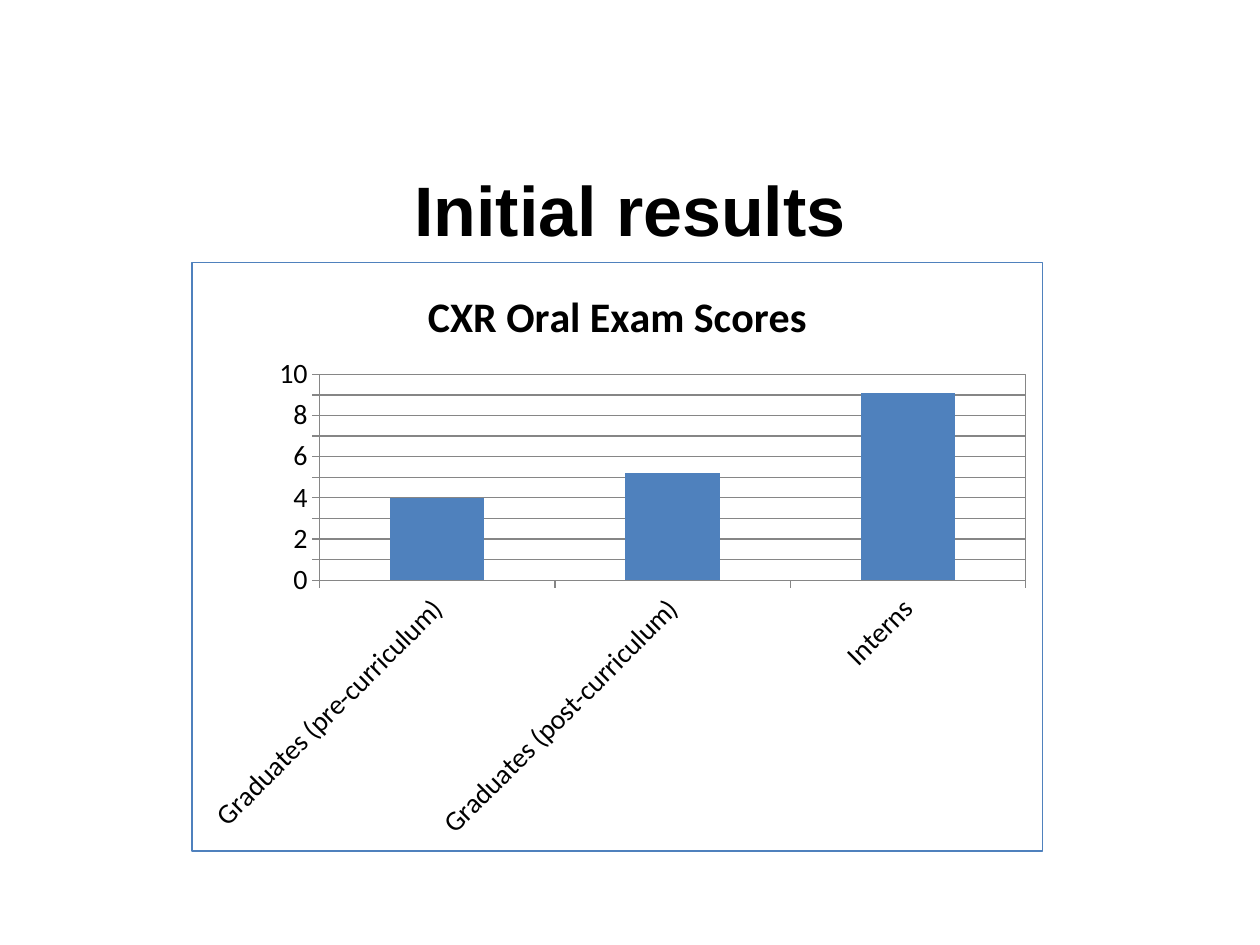
from lxml.etree import fromstring
from pptx import Presentation
from pptx.chart.data import CategoryChartData
from pptx.dml.color import RGBColor
from pptx.enum.chart import XL_CHART_TYPE, XL_TICK_MARK
from pptx.enum.text import MSO_ANCHOR, PP_ALIGN
from pptx.util import Cm, Pt

BLACK = RGBColor(0x00, 0x00, 0x00)
BLUE = RGBColor(0x4F, 0x81, 0xBD)
GREY = RGBColor(0x86, 0x86, 0x86)

HEADING = "Initial results"
CHART_TITLE = "CXR Oral Exam Scores"
SCORES = {
    "Graduates (pre-curriculum)": 4,
    "Graduates (post-curriculum)": 5.2,
    "Interns": 9.1,
}
PLOT_LAYOUT = {"x": 0.15, "y": 0.19, "w": 0.83, "h": 0.35}

HEADING_FONT = {"name": "Arial", "size": Pt(40), "bold": True}
CHART_FONT = {"name": "Calibri", "size": Pt(16), "bold": False}
CHART_TITLE_FONT = {"name": "Calibri", "size": Pt(24), "bold": True}
HEADING_BOX = {"left": Cm(1.27), "top": Cm(2.62), "width": Cm(22.86), "height": Cm(3.18)}
CHART_BOX = (Cm(3.86), Cm(5.28), Cm(17.17), Cm(11.89))

NAMESPACES = (
    'xmlns:c="http://schemas.openxmlformats.org/drawingml/2006/chart" '
    'xmlns:a="http://schemas.openxmlformats.org/drawingml/2006/main"'
)


def set_values(target, values):
    for name, value in values.items():
        setattr(target, name, value)


def style_font(font, values):
    set_values(font, values)
    font.color.rgb = BLACK


def outline_xml(color):
    return fromstring(
        f'<c:spPr {NAMESPACES}><a:noFill/><a:ln w="{Pt(0.75)}">'
        f'<a:solidFill><a:srgbClr val="{color}"/></a:solidFill></a:ln></c:spPr>'
    )


def plot_layout_xml():
    modes = '<c:xMode val="edge"/><c:yMode val="edge"/>'
    sizes = "".join(f'<c:{key} val="{share}"/>' for key, share in PLOT_LAYOUT.items())
    return fromstring(
        f'<c:layout {NAMESPACES}><c:manualLayout><c:layoutTarget val="inner"/>'
        f"{modes}{sizes}</c:manualLayout></c:layout>"
    )


def add_heading(slide):
    heading = slide.shapes.title
    set_values(heading, HEADING_BOX)
    frame = heading.text_frame
    frame.text = HEADING
    frame.vertical_anchor = MSO_ANCHOR.MIDDLE
    paragraph = frame.paragraphs[0]
    paragraph.alignment = PP_ALIGN.CENTER
    style_font(paragraph.runs[0].font, HEADING_FONT)


def add_scores_chart(slide):
    data = CategoryChartData()
    data.categories = list(SCORES)
    data.add_series("Series 1", list(SCORES.values()))
    chart = slide.shapes.add_chart(
        XL_CHART_TYPE.COLUMN_CLUSTERED, *CHART_BOX, data
    ).chart
    style_font(chart.font, CHART_FONT)
    chart.has_legend = False
    chart.has_title = True
    title_frame = chart.chart_title.text_frame
    title_frame.text = CHART_TITLE
    style_font(title_frame.paragraphs[0].runs[0].font, CHART_TITLE_FONT)

    plot = chart.plots[0]
    set_values(plot, {"gap_width": 150, "vary_by_categories": False})
    bars = plot.series[0].format.fill
    bars.solid()
    bars.fore_color.rgb = BLUE

    set_values(chart.value_axis, {
        "minimum_scale": 0, "maximum_scale": 10, "major_unit": 1,
        "has_major_gridlines": True,
    })
    for axis in (chart.category_axis, chart.value_axis):
        axis.major_tick_mark = XL_TICK_MARK.OUTSIDE
        style_font(axis.tick_labels.font, CHART_FONT)
    for part in (chart.category_axis, chart.value_axis, chart.value_axis.major_gridlines):
        part.format.line.color.rgb = GREY
        part.format.line.width = Pt(0.75)

    root = chart.element
    root.find(".//{*}catAx/{*}txPr/{*}bodyPr").set("rot", str(-45 * 60000))
    plot_area = root.find(".//{*}plotArea")
    for layout in plot_area.findall("{*}layout"):
        plot_area.remove(layout)
    plot_area.insert(0, plot_layout_xml())
    plot_area.append(outline_xml(GREY))
    root.find("{*}chart").addnext(outline_xml(BLUE))


def main():
    presentation = Presentation()
    presentation.slide_width, presentation.slide_height = Cm(25.4), Cm(19.05)
    slide = presentation.slides.add_slide(presentation.slide_layouts[5])
    add_scores_chart(slide)
    add_heading(slide)
    presentation.save("out.pptx")


if __name__ == "__main__":
    main()
